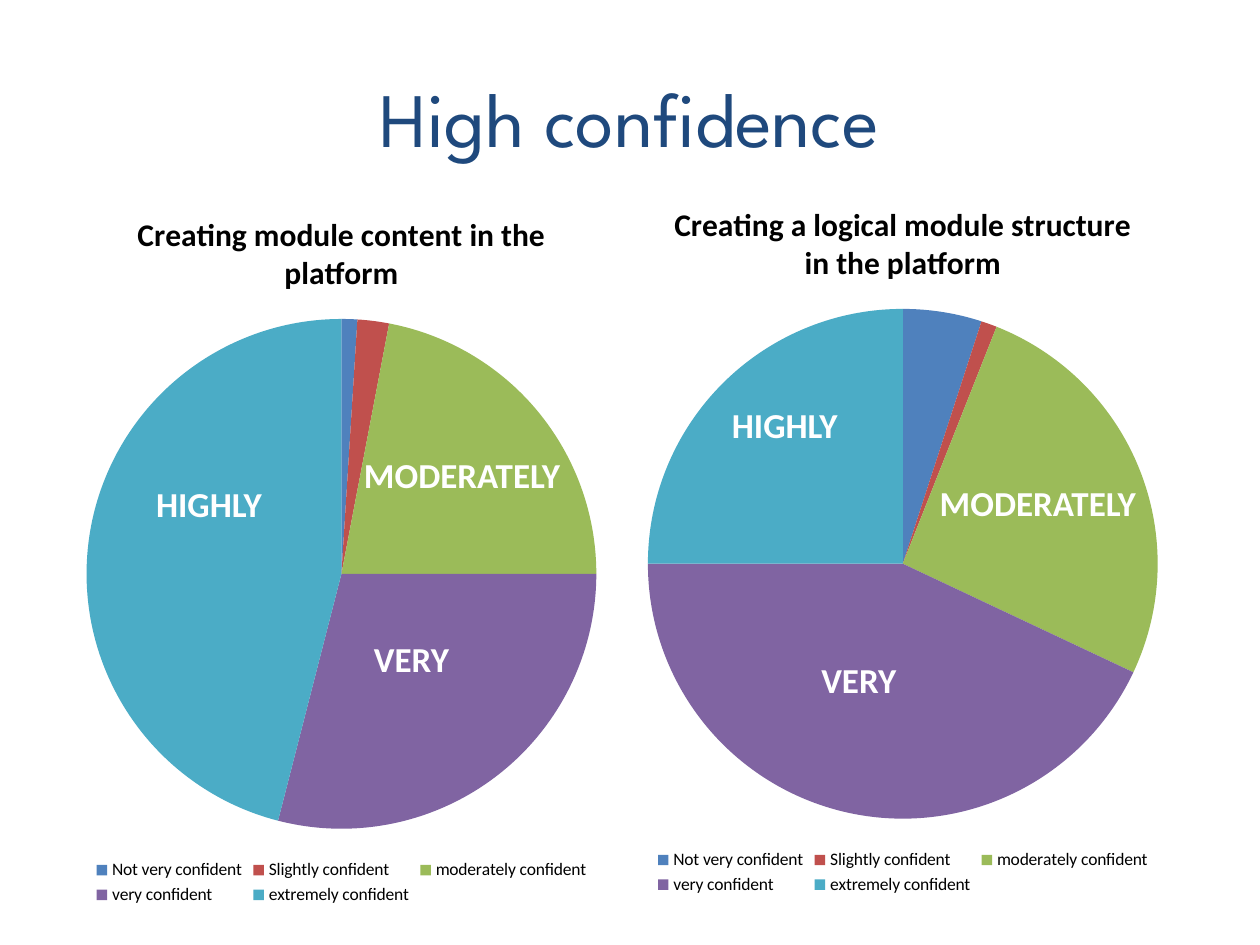
from dataclasses import dataclass

from pptx import Presentation
from pptx.chart.data import CategoryChartData
from pptx.dml.color import RGBColor
from pptx.enum.chart import XL_CHART_TYPE, XL_LEGEND_POSITION
from pptx.enum.text import MSO_ANCHOR, MSO_AUTO_SIZE, PP_ALIGN
from pptx.slide import Slide
from pptx.util import Inches, Pt

COLORS = {"title": "1F497D", "text": "000000", "label": "FFFFFF"}
LEVELS = {
    "Not very confident": "4F81BD",
    "Slightly confident": "C0504D",
    "moderately confident": "9BBB59",
    "very confident ": "8064A2",
    "extremely confident": "4BACC6",
}
TITLE_FONT = {"name": "League Spartan", "size": Pt(44), "color": COLORS["title"]}
CHART_FONT = {"name": "Calibri", "size": Pt(10), "color": COLORS["text"]}
CHART_TITLE_FONT = CHART_FONT | {"size": Pt(18), "bold": True}
LABEL_FONT = {"name": "Calibri", "size": Pt(20), "bold": True, "color": COLORS["label"]}


@dataclass
class Label:
    text: str
    left: float
    top: float
    width: float


@dataclass
class Pie:
    title: str
    left: float
    top: float
    width: float
    values: tuple[int, ...]
    labels: tuple[Label, ...]


PIES = (
    Pie("Creating module content in the platform", 0.35, 1.47, 4.72, (1, 2, 22, 29, 46), (
        Label("HIGHLY", 1.14, 3.78, 1.05),
        Label("VERY", 2.87, 5.01, 0.8),
        Label("MODERATELY", 2.79, 3.55, 1.77),
    )),
    Pie("Creating a logical module structure in the platform", 4.84, 1.39, 4.65, (5, 1, 26, 43, 25), (
        Label("MODERATELY", 7.36, 3.77, 1.77),
        Label("HIGHLY", 5.71, 3.15, 1.05),
        Label("VERY", 6.42, 5.18, 0.8),
    )),
)


def set_font(font, style: dict) -> None:
    for key, value in style.items():
        if key == "color":
            font.color.rgb = RGBColor.from_string(value)
        else:
            setattr(font, key, value)


def add_title(s: Slide, text: str) -> None:
    sp = s.shapes.title
    sp.left, sp.top, sp.width, sp.height = map(Inches, (0.5, 0.3, 9, 1.25))
    tf = sp.text_frame
    tf.text = text
    tf.vertical_anchor = MSO_ANCHOR.MIDDLE
    p = tf.paragraphs[0]
    p.alignment = PP_ALIGN.CENTER
    set_font(p.runs[0].font, TITLE_FONT)


def add_label(s: Slide, label: Label) -> None:
    sp = s.shapes.add_textbox(*map(Inches, (label.left, label.top, label.width, 0.44)))
    tf = sp.text_frame
    tf.word_wrap = False
    tf.auto_size = MSO_AUTO_SIZE.SHAPE_TO_FIT_TEXT
    r = tf.paragraphs[0].add_run()
    r.text = label.text
    set_font(r.font, LABEL_FONT)


def add_pie(s: Slide, pie: Pie) -> None:
    data = CategoryChartData()
    data.categories = list(LEVELS)
    data.add_series("Series 1", pie.values)
    box = map(Inches, (pie.left, pie.top, pie.width, 5.75))
    chart = s.shapes.add_chart(XL_CHART_TYPE.PIE, *box, data).chart
    set_font(chart.font, CHART_FONT)

    chart.has_title = True
    tf = chart.chart_title.text_frame
    tf.text = pie.title
    set_font(tf.paragraphs[0].runs[0].font, CHART_TITLE_FONT)
    chart.chart_title.include_in_layout = False

    chart.has_legend = True
    chart.legend.position = XL_LEGEND_POSITION.BOTTOM
    chart.legend.include_in_layout = False

    plot = chart.plots[0]
    plot.vary_by_categories = True
    for i, color in enumerate(LEVELS.values()):
        fill = plot.series[0].points[i].format.fill
        fill.solid()
        fill.fore_color.rgb = RGBColor.from_string(color)

    for label in pie.labels:
        add_label(s, label)


def main() -> None:
    prs = Presentation()
    prs.slide_width, prs.slide_height = Inches(10), Inches(7.5)
    s = prs.slides.add_slide(prs.slide_layouts[5])
    add_title(s, "High confidence")
    for pie in PIES:
        add_pie(s, pie)
    prs.save("out.pptx")


if __name__ == "__main__":
    main()
